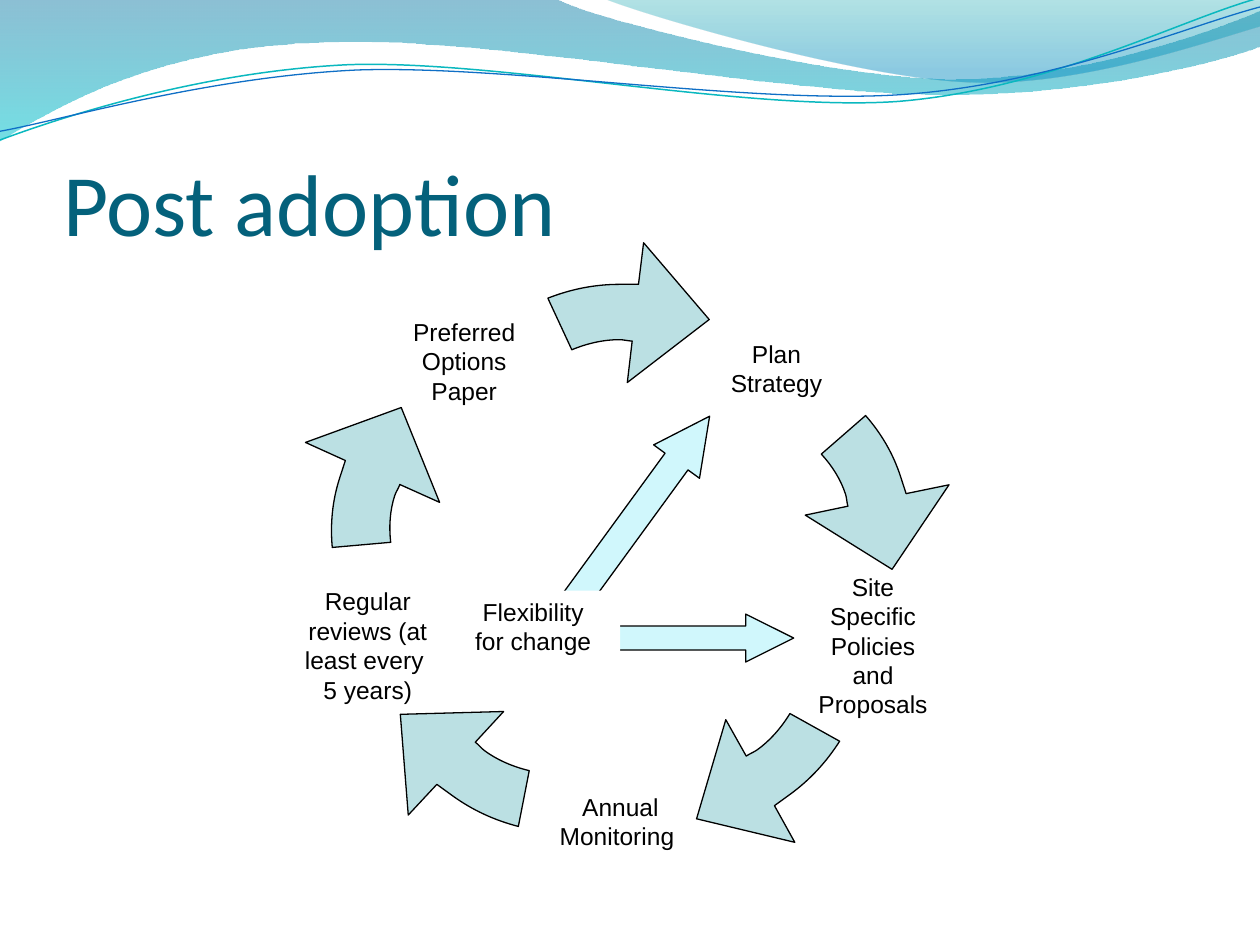
from math import cos, radians, sin

from lxml import etree
from pptx import Presentation
from pptx.dml.color import RGBColor
from pptx.enum import shapes as kinds, text as txt
from pptx.oxml import ns
from pptx.util import Pt

HUES = {
    "title": "04617B", "ink": "000000", "paper": "FFFFFF",
    "ring": "BBE0E3", "arrow": "D0F7FC",
    "deep": "0074A1", "aqua": "00C6CF", "teal": "00A1A9", "sky": "008BBF",
    "curl": "0AB8BF", "blue": "0F6FC6",
}

# Outlines: each step holds one point (line) or three points (curve).
WAVE = [[(0, 0)], [(317, -1)],
        [(343, 12), (478, 45), (546, 45)], [(614, 45), (690, 19), (720, 6)],
        [(721, 26)],
        [(708, 32), (626, 55), (537, 54)], [(447, 54), (275, 20), (185, 24)],
        [(93, 26), (33, 60), (-1, 81)]]
CREST = [[(345, -1)], [(366, 8), (491, 45), (554, 47)],
         [(616, 50), (692, 23), (720, 15)], [(720, 0)]]
CURL = [[(0, 80)], [(35, 67), (114, 41), (199, 37)],
        [(284, 34), (427, 64), (513, 58)], [(600, 51), (675, 11), (719, -1)]]
RIPPLE = [[(0, 75)], [(34, 69), (118, 44), (204, 40)],
          [(290, 37), (430, 60), (516, 54)], [(602, 48), (678, 15), (720, 4)]]
# The top arrow of the ring, measured from its pivot.
BEND = [[(6.8, -64.4)],
        [(4.7, -64.4), (1.8, -65.2), (-0.4, -65.2)],
        [(-9.7, -65.2), (-19.1, -63), (-27.7, -59.4)],
        [(-41.4, -88.9)],
        [(-28.4, -94), (-14.8, -96.8), (-0.4, -96.8)],
        [(3.2, -96.8), (6.8, -96.8), (10.4, -96.8)],
        [(13.3, -120.6)], [(50.8, -76.7)], [(4, -40.7)]]

LABELS = ["Plan Strategy", "Site Specific Policies and Proposals",
          "Annual Monitoring ", "Regular reviews (at least every \v5 years)",
          "Preferred Options Paper"]


def hue(name):
    return RGBColor.from_string(HUES[name])


def paint(shape, fill=None, line=None, width=0.75):
    shape.shadow.inherit = False
    if fill:
        shape.fill.solid()
        shape.fill.fore_color.rgb = hue(fill)
    else:
        shape.fill.background()
    if line:
        shape.line.color.rgb = hue(line)
        shape.line.width = Pt(width)
    else:
        shape.line.fill.background()


def trace(slide, steps, close=True, frame=None):
    """Draw an outline, turning each three-point step into a curve.

    A frame of two corners sets the extent, and so the pivot.
    """
    pts = [(Pt(x), Pt(y)) for step in steps for x, y in step]
    ends = [(Pt(x), Pt(y)) for x, y in frame or ()]
    pen = slide.shapes.build_freeform(*(ends or pts)[0], scale=1.0)
    if ends:
        pen.move_to(*pts[0])
    pen.add_line_segments(pts[1:], close=close)
    if ends:
        pen.move_to(*ends[1])
    shape = pen.convert_to_shape()
    legs = iter(shape.element.xpath(".//a:lnTo"))
    for step in steps[1:]:
        leg = next(legs)
        if len(step) == 3:
            curve = etree.Element(ns.qn("a:cubicBezTo"))
            leg.addprevious(curve)
            for part in (leg, next(legs), next(legs)):
                curve.append(part[0])
                part.getparent().remove(part)
    return shape


def shade(shape, stops):
    """Fill downwards with (position, colour, opacity percent) stops."""
    paint(shape)
    shape.fill.gradient()
    shape.fill.gradient_angle = 270
    for stop, (pos, name, _) in zip(shape.fill.gradient_stops, stops):
        stop.position = pos
        stop.color.rgb = hue(name)
    tints = shape.element.xpath(".//a:gradFill//a:srgbClr")
    for tint, (_, _, clear) in zip(tints, stops):
        etree.SubElement(tint, ns.qn("a:alpha"), val=str(clear * 1000))


def banner(slide):
    shade(trace(slide, WAVE), [(0, "deep", 45), (1, "aqua", 55)])
    shade(trace(slide, CREST), [(0, "teal", 30), (0.8, "sky", 45)])
    paint(trace(slide, CURL, False), line="curl", width=0.85)
    paint(trace(slide, RIPPLE, False), line="blue")


def style(frame, font, size, color, align):
    for para in frame.paragraphs:
        para.alignment = align
        for run in para.runs:
            run.font.name = font
            run.font.size = Pt(size)
            run.font.color.rgb = hue(color)


def heading(slide, box, words):
    title = slide.shapes.title
    title.element.getparent().append(title.element)  # in front of the banner
    title.left, title.top, title.width, title.height = map(Pt, box)
    frame = title.text_frame
    frame.text = words
    frame.auto_size = txt.MSO_AUTO_SIZE.NONE
    frame.vertical_anchor = txt.MSO_ANCHOR.BOTTOM
    frame.margin_left = frame.margin_right = frame.margin_bottom = 0
    style(frame, "Calibri", 50, "title", txt.PP_ALIGN.LEFT)


def label(slide, x, y, words):
    """Centre a label on the given point."""
    wide, high = 74, 71
    box = slide.shapes.add_textbox(
        Pt(x - wide / 2), Pt(y - high / 2), Pt(wide), Pt(high))
    frame = box.text_frame
    frame.word_wrap = True
    frame.text = words
    frame.vertical_anchor = txt.MSO_ANCHOR.MIDDLE
    frame.margin_left = frame.margin_right = 0
    frame.margin_top = frame.margin_bottom = 0
    style(frame, "Arial", 14, "ink", txt.PP_ALIGN.CENTER)
    return frame


def bend(slide, x, y, angle):
    """Turn the ring arrow about its pivot; side arrows are taller."""
    fit = 0.957 if angle in (72, 288) else 1
    half, tall = 101.2 * fit, 96.8 / fit
    steps = [[(x + px * fit, y + py / fit) for px, py in step]
             for step in BEND]
    shape = trace(slide, steps,
                  frame=[(x - half, y - tall), (x + half, y + tall)])
    shape.left, shape.top = Pt(x - half), Pt(y - tall)
    # The head reaches above the frame, so the extent grows evenly below.
    rise = max(0, 120.6 / fit - tall)
    shape.top, shape.height = Pt(y - tall - rise), Pt(2 * tall + rise)
    a = radians(angle)
    shape.left = Pt(x - half + rise / 2 * sin(a))
    shape.top = Pt(y - tall - rise / 2 - rise / 2 * cos(a))
    shape.rotation = angle
    paint(shape, "ring", "ink")


def block(slide, kind, box, fill, line=None):
    shape = slide.shapes.add_shape(kind, *map(Pt, box))
    paint(shape, fill, line)
    return shape


def cycle(slide, box):
    """Five labels and five arrows around the middle of the box."""
    left, top, wide, high = box
    x, y = left + wide / 2, top + high / 2

    def spot(angle, rx, ry):
        a = radians(angle)
        return x + rx * sin(a), y - ry * cos(a)

    for i in range(5):
        bend(slide, *spot(72 * i, 67.3, 64.5), 72 * i)
    for i, words in enumerate(LABELS):
        frame = label(slide, *spot(36 + 72 * i, wide / 2, high / 2), words)
        if i == 0:
            frame.margin_top = Pt(8)
    change(slide, (x - 99.5, y - 49.3, 198.5, 117))


def change(slide, box):
    """Two arrows that start behind a plain note."""
    left, top, wide, high = box
    arrow = kinds.MSO_SHAPE.RIGHT_ARROW
    steep = block(slide, arrow, (left + 45.3, top + 0.6, 132.4, 32.4),
                  "arrow", "ink")
    steep.rotation = 306.1
    steep.adjustments[1] = 0.99
    flat = block(slide, arrow, (left + wide - 113.8, top + 76.4, 113.8, 27.4),
                 "arrow", "ink")
    flat.adjustments[1] = 1
    note = block(slide, kinds.MSO_SHAPE.RECTANGLE,
                 (left, top + high - 54, 99.4, 54), "paper")
    note.text_frame.text = "Flexibility\nfor change"
    note.text_frame.vertical_anchor = txt.MSO_ANCHOR.TOP
    style(note.text_frame, "Arial", 14, "ink", txt.PP_ALIGN.CENTER)


def main():
    deck = Presentation()
    deck.slide_width, deck.slide_height = Pt(720), Pt(540)
    slide = deck.slides.add_slide(deck.slide_layouts[5])
    banner(slide)
    heading(slide, (36, 55.4, 648, 90), "Post adoption")
    cycle(slide, (202.7, 178.5, 303.6, 290.6))
    deck.save("out.pptx")


if __name__ == "__main__":
    main()
